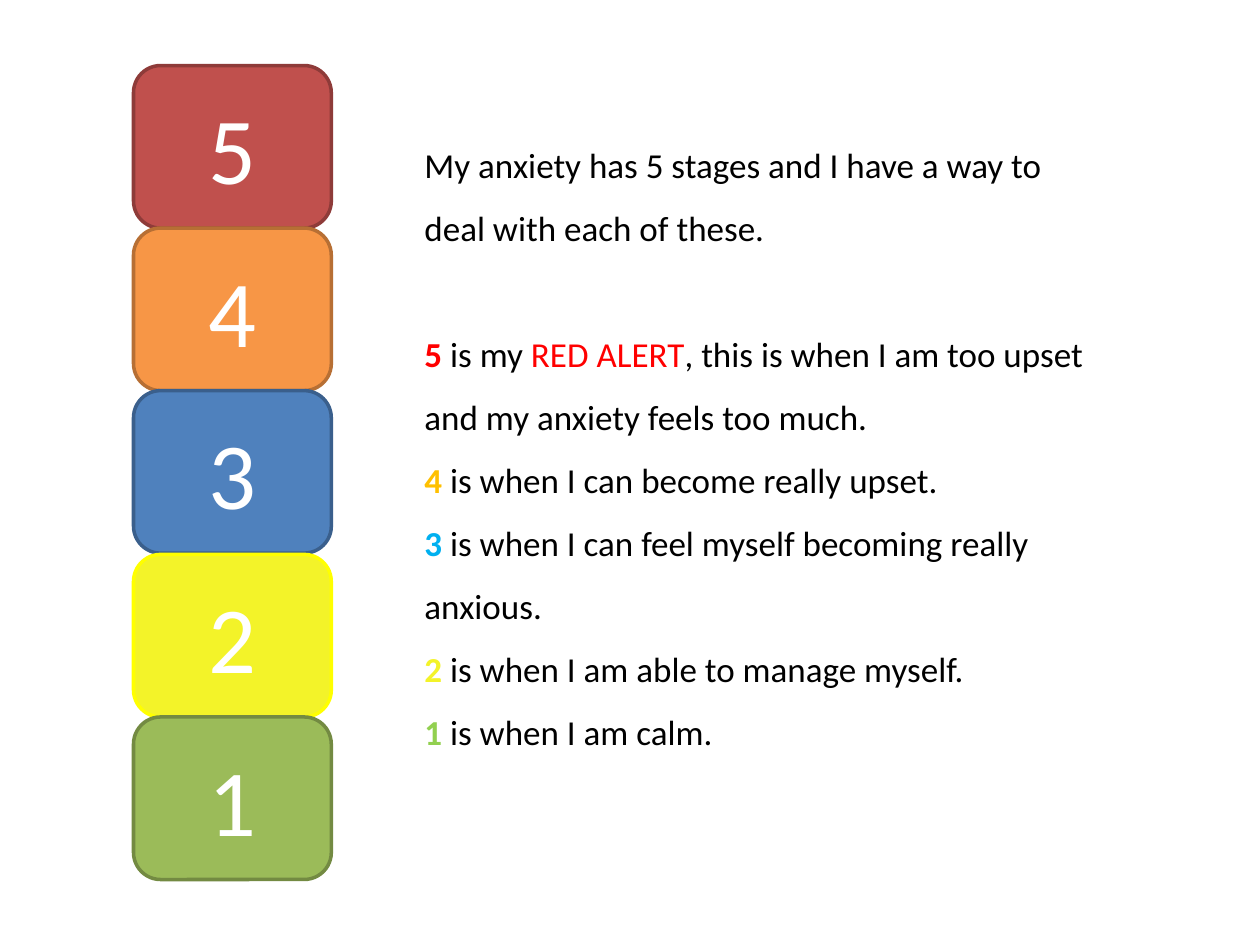
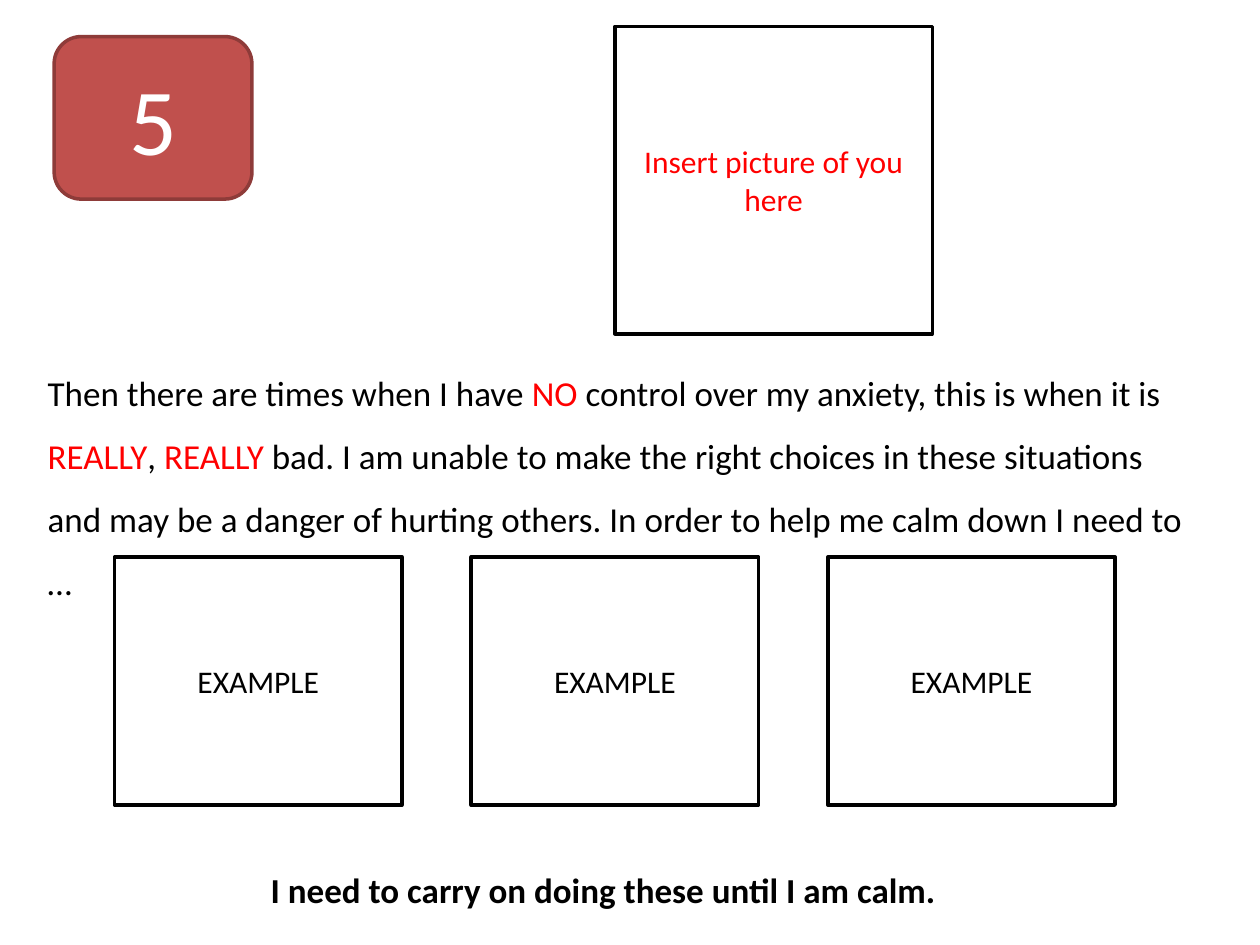
from pptx import Presentation
from pptx import util as u
from pptx.dml.color import RGBColor
from pptx.enum import shapes, text

PX = u.Inches(1) // 100
FONT = "Calibri"
BLACK = RGBColor(0x00, 0x00, 0x00)
WHITE = RGBColor(0xFF, 0xFF, 0xFF)
RED = RGBColor(0xFF, 0x00, 0x00)
AMBER = RGBColor(0xFF, 0xC0, 0x00)
SKY = RGBColor(0x00, 0xB0, 0xF0)
LEMON = RGBColor(0xF3, 0xF3, 0x29)
LIME = RGBColor(0x92, 0xD0, 0x50)
STAGES = {
    5: (RGBColor(0xC0, 0x50, 0x4D), RGBColor(0x8E, 0x3B, 0x39)),
    4: (RGBColor(0xF7, 0x96, 0x46), RGBColor(0xB7, 0x6F, 0x34)),
    3: (RGBColor(0x4F, 0x81, 0xBD), RGBColor(0x3A, 0x5F, 0x8C)),
    2: (LEMON, RGBColor(0xFF, 0xFF, 0x00)),
    1: (RGBColor(0x9B, 0xBB, 0x59), RGBColor(0x73, 0x8A, 0x42)),
}
MEANINGS = [
    [("5 ", RED, True), ("is my ",), ("RED ALERT", RED),
     (", this is when I am too upset and my anxiety feels too much.",)],
    [("4", AMBER, True), (" is when I can become really upset.",)],
    [("3", SKY, True), (" is when I can feel myself becoming really anxious.",)],
    [("2", LEMON, True), (" is when I am able to manage myself.",)],
    [("1", LIME, True), (" is when I am calm.",)],
]


def emu(*lengths):
    """Turn px lengths into EMU."""
    return [n * PX for n in lengths]


def add_run(p, words, color=BLACK, bold=False, size=20):
    """Append one formatted run to a paragraph."""
    r = p.add_run()
    r.text = words
    r.font.name = FONT
    r.font.size = u.Pt(size)
    r.font.bold = bold
    r.font.color.rgb = color


def add_box(s, kind, box, fill, line, label, color, size):
    """Add an outlined shape with a centred label."""
    sp = s.shapes.add_shape(kind, *emu(*box))
    sp.shadow.inherit = False
    sp.fill.solid()
    sp.fill.fore_color.rgb = fill
    sp.line.color.rgb = line
    sp.line.width = u.Pt(2)
    tf = sp.text_frame
    tf.word_wrap = True
    tf.vertical_anchor = text.MSO_ANCHOR.MIDDLE
    p = tf.paragraphs[0]
    p.alignment = text.PP_ALIGN.CENTER
    add_run(p, label, color, size=size)


def add_stage(s, stage, left, top):
    """Add the numbered tile of an anxiety stage."""
    add_box(s, shapes.MSO_SHAPE.ROUNDED_RECTANGLE, (left, top, 157, 129),
            *STAGES[stage], str(stage), WHITE, 54)


def add_frame(s, box, label, color=BLACK):
    """Add a white frame that waits for the reader's own content."""
    add_box(s, shapes.MSO_SHAPE.RECTANGLE, box, WHITE, BLACK, label, color, 18)


def add_story(s, box, paragraphs):
    """Add widely spaced text, one list of runs per paragraph."""
    tf = s.shapes.add_textbox(*emu(*box)).text_frame
    tf.word_wrap = True
    for i, runs in enumerate(paragraphs):
        p = tf.add_paragraph() if i else tf.paragraphs[0]
        p.line_spacing = 1.5
        for run in runs:
            add_run(p, *run)
    return tf


def build_overview(s):
    """Show all five stages and what they mean."""
    for i, stage in enumerate(STAGES):
        add_stage(s, stage, 106, 52 + 647 * i // len(STAGES))
    intro = [("My anxiety has 5 stages and I have a way to deal with each of these.",)]
    tf = add_story(s, (327, 92, 559, 515), [intro, *MEANINGS])
    tf.paragraphs[0].space_after = u.Pt(36)


def build_red_alert(s):
    """Explain stage five and leave room for calming examples."""
    add_stage(s, 5, 43, 29)
    add_frame(s, (488, 21, 252, 244), "Insert picture of you here", RED)
    add_story(s, (28, 273, 937, 162), [[
        ("Then there are times when I have ",), ("NO", RED),
        (" control over my anxiety, this is when it is ",),
        ("REALLY", RED), (", ",), ("REALLY", RED),
        (" bad. I am unable to make the right choices in these situations and may be "
         "a danger of hurting others. In order to help me calm down I need to …",)]])
    for i in range(3):
        add_frame(s, (91 + 283 * i, 442, 228, 197), "EXAMPLE")
    add_story(s, (205, 668, 567, 61),
              [[("I need to carry on doing these until I am calm.", BLACK, True)]])


def main():
    """Build and save the presentation."""
    prs = Presentation()
    prs.slide_width, prs.slide_height = emu(1000, 750)
    blank = prs.slide_layouts[6]
    for build in (build_overview, build_red_alert):
        build(prs.slides.add_slide(blank))
    prs.save("out.pptx")


if __name__ == "__main__":
    main()
